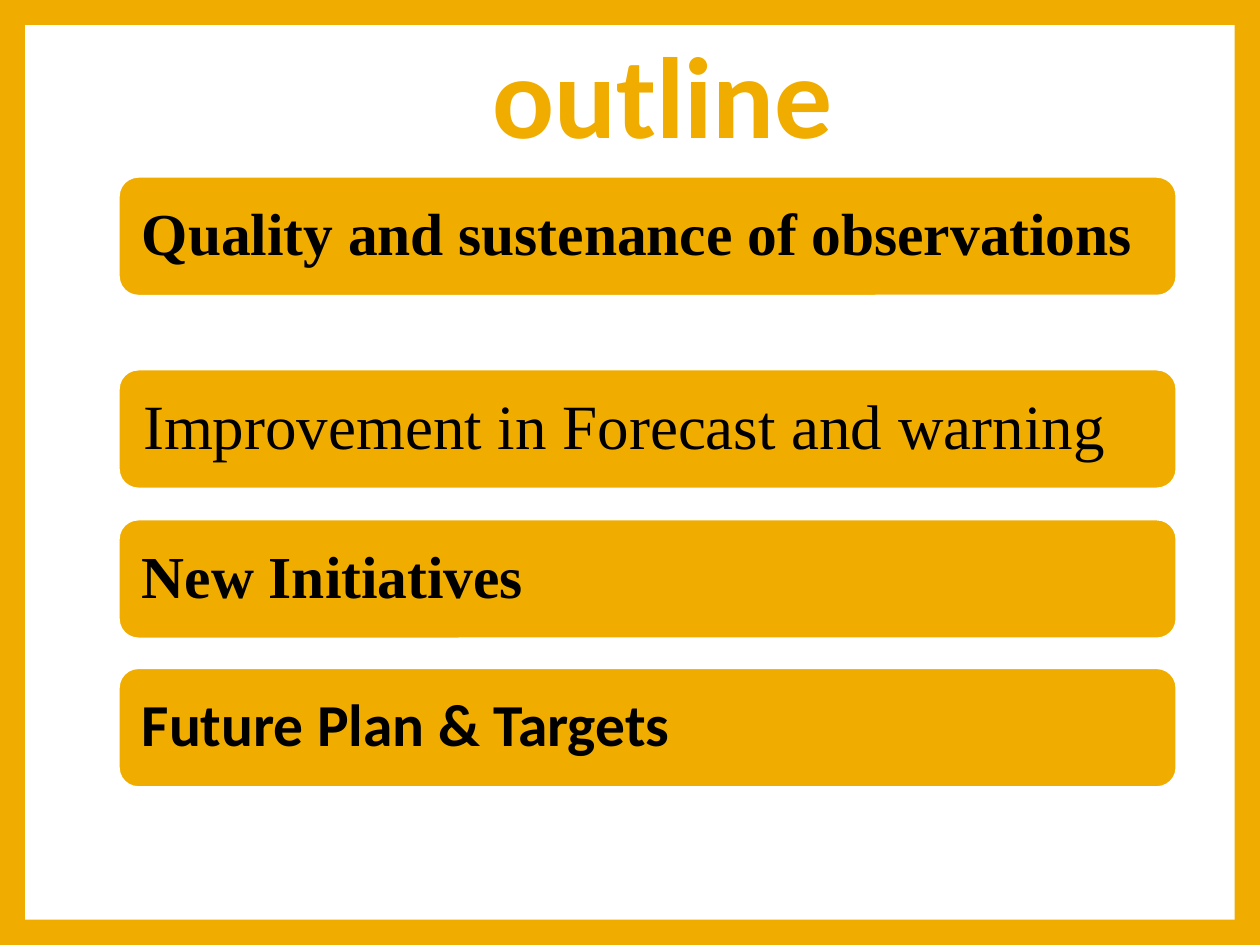
"""Build the outline slide: a framed page with a title and four topic bars."""
from dataclasses import dataclass

from pptx import Presentation
from pptx.dml.color import RGBColor
from pptx.enum.shapes import MSO_SHAPE
from pptx.enum.text import MSO_ANCHOR, MSO_AUTO_SIZE, PP_ALIGN
from pptx.util import Inches, Pt

RECTANGLE = MSO_SHAPE.RECTANGLE
ROUNDED = MSO_SHAPE.ROUNDED_RECTANGLE
MIDDLE = MSO_ANCHOR.MIDDLE
NO_AUTOFIT = MSO_AUTO_SIZE.NONE
LEFT, CENTER = PP_ALIGN.LEFT, PP_ALIGN.CENTER

AMBER = RGBColor(0xF0, 0xAD, 0x00)
WHITE = RGBColor(0xFF, 0xFF, 0xFF)
BLACK = RGBColor(0x00, 0x00, 0x00)
SANS, SERIF = "Calibri", "Times New Roman"

WIDTH, HEIGHT = Inches(10), Inches(7.5)
FRAME = Inches(0.2)
BAR_LEFT, BAR_WIDTH, BAR_HEIGHT = Inches(0.94), Inches(8.4), Inches(0.95)


@dataclass(frozen=True)
class Topic:
    """One bar of the outline."""

    text: str
    top: float
    font: str = SERIF
    size: int = 34
    bold: bool = True
    inset: float = 0.14


TOPICS = (
    Topic("Quality and sustenance of observations", 1.4),
    Topic("Improvement in Forecast and warning", 2.93, size=36, bold=False, inset=0.15),
    Topic("New Initiatives", 4.12),
    Topic("Future Plan & Targets", 5.3, font=SANS),
)


def apply_format(target, values: dict) -> None:
    """Set each named attribute on the target."""
    for name, value in values.items():
        setattr(target, name, value)


def write_text(shape, text: str, alignment, color: RGBColor, font: dict, inset: float) -> None:
    """Put one formatted paragraph in the middle of a shape."""
    frame = shape.text_frame
    margins = {f"margin_{side}": Inches(inset) for side in ("left", "top", "right", "bottom")}
    apply_format(frame, {"word_wrap": True, "auto_size": NO_AUTOFIT,
                         "vertical_anchor": MIDDLE, **margins})
    paragraph = frame.paragraphs[0]
    apply_format(paragraph, {"alignment": alignment, "line_spacing": 0.9})
    run = paragraph.add_run()
    run.text = text
    apply_format(run.font, font)
    run.font.color.rgb = color


def add_panel(slide, title) -> None:
    """Lay the white page behind the title."""
    panel = slide.shapes.add_shape(RECTANGLE, FRAME, FRAME, WIDTH - 2 * FRAME, HEIGHT - 2 * FRAME)
    panel.shadow.inherit = False
    panel.fill.solid()
    panel.fill.fore_color.rgb = WHITE
    panel.line.fill.background()
    title.element.addprevious(panel.element)


def add_topic(slide, topic: Topic) -> None:
    """Draw one rounded bar with its wording."""
    bar = slide.shapes.add_shape(ROUNDED, BAR_LEFT, Inches(topic.top), BAR_WIDTH, BAR_HEIGHT)
    bar.shadow.inherit = False
    bar.fill.solid()
    bar.fill.fore_color.rgb = AMBER
    bar.line.color.rgb = WHITE
    bar.line.width = Pt(1.5)
    font = {"name": topic.font, "size": Pt(topic.size), "bold": topic.bold}
    write_text(bar, topic.text, LEFT, BLACK, font, topic.inset)


def main() -> None:
    """Build and save the presentation."""
    presentation = Presentation()
    apply_format(presentation, {"slide_width": WIDTH, "slide_height": HEIGHT})
    slide = presentation.slides.add_slide(presentation.slide_layouts[5])
    slide.background.fill.solid()
    slide.background.fill.fore_color.rgb = AMBER
    title = slide.shapes.title
    apply_format(title, {"left": Inches(1.21), "top": Inches(0.26),
                         "width": Inches(8.1), "height": Inches(1.09)})
    write_text(title, "outline", CENTER, AMBER, {"name": SANS, "size": Pt(66), "bold": True}, 0.05)
    add_panel(slide, title)
    for topic in TOPICS:
        add_topic(slide, topic)
    presentation.save("out.pptx")


if __name__ == "__main__":
    main()
